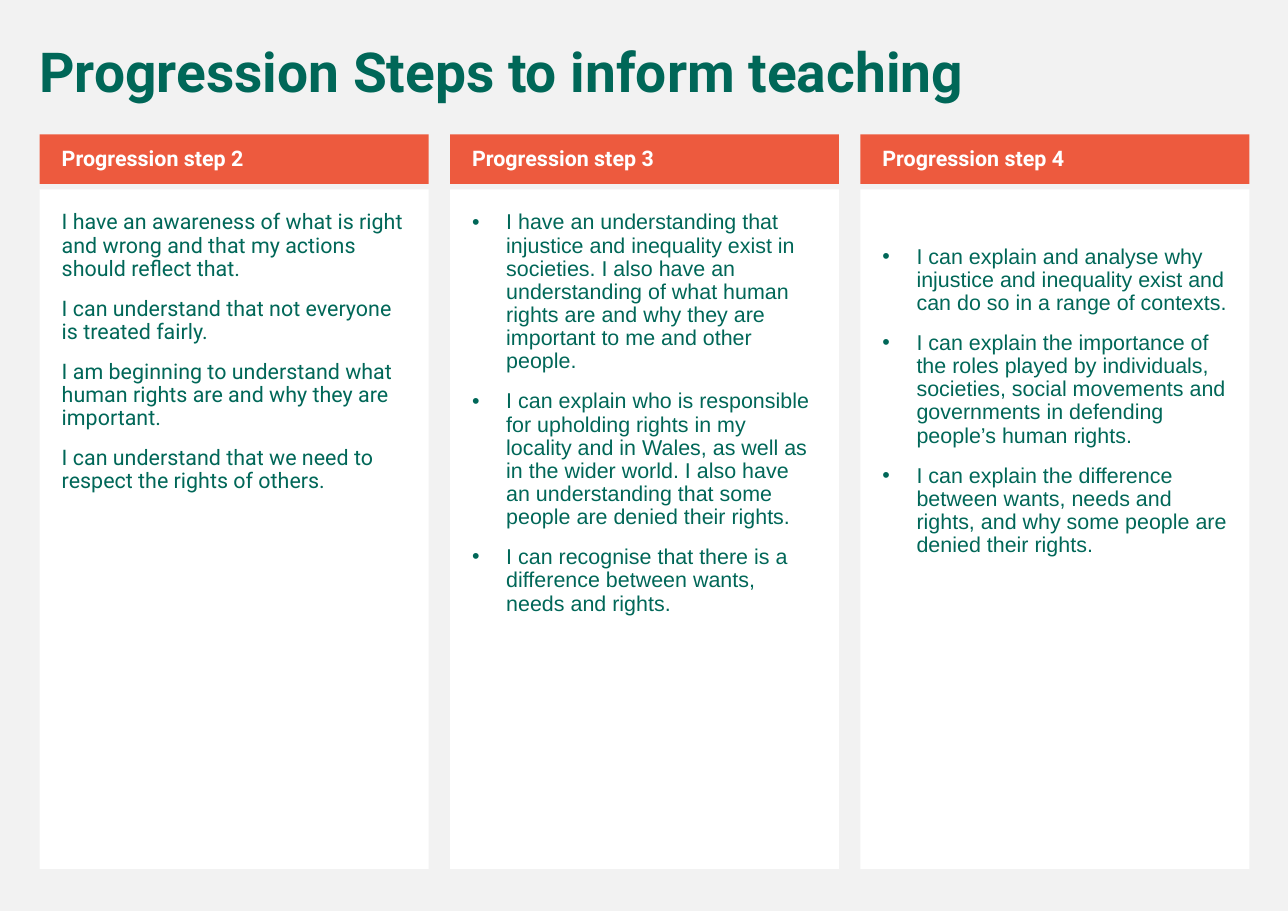
from dataclasses import dataclass

from lxml import etree
from pptx import Presentation
from pptx.dml.color import RGBColor
from pptx.enum.shapes import MSO_SHAPE
from pptx.enum.text import MSO_ANCHOR, PP_ALIGN
from pptx.oxml.ns import qn
from pptx.shapes.autoshape import Shape
from pptx.slide import Slide
from pptx.text.text import TextFrame
from pptx.util import Inches, Pt

RECTANGLE = MSO_SHAPE.RECTANGLE
TOP, MIDDLE = MSO_ANCHOR.TOP, MSO_ANCHOR.MIDDLE
LEFT = PP_ALIGN.LEFT

SLIDE_WIDTH, SLIDE_HEIGHT = 11.69, 8.27
COLUMN, ROW = SLIDE_WIDTH / 100, SLIDE_HEIGHT / 100
CARD_LEFT, CARD_WIDTH, CARD_PITCH = 3.08, 30.2, 31.86
HEADING_TOP, HEADING_HEIGHT = 14.75, 5.44
BODY_TOP, BODY_HEIGHT = 20.8, 74.6
PADDING = 0.2
BULLET_INDENT = 0.31

COLORS = {
    "background": "F2F2F2",
    "text": "006758",
    "heading": "ED5A3E",
    "white": "FFFFFF",
}


@dataclass(frozen=True)
class TextStyle:
    """Font settings of a block of text."""
    font: str
    size: int
    color: str
    bold: bool = False
    bulleted: bool = False


@dataclass(frozen=True)
class Area:
    """Position and size in grid columns and rows."""
    left: float
    top: float
    width: float
    height: float

    def lengths(self) -> tuple[int, int, int, int]:
        """Return left, top, width and height as slide lengths."""
        return (Inches(self.left * COLUMN), Inches(self.top * ROW),
                Inches(self.width * COLUMN), Inches(self.height * ROW))


@dataclass(frozen=True)
class ProgressionStep:
    """One column of the slide."""
    heading: str
    statements: tuple[str, ...]
    style: TextStyle
    top_padding: float = PADDING


TITLE = TextStyle("Roboto", 36, "text", bold=True)
HEADING = TextStyle("Roboto", 14, "white", bold=True)
PLAIN = TextStyle("Roboto", 14, "text")
BULLETED = TextStyle("Arial", 14, "text", bulleted=True)

STEPS = (
    ProgressionStep("Progression step 2", (
        "I have an awareness of what is right and wrong and that my actions should reflect that.",
        "I can understand that not everyone is treated fairly.",
        "I am beginning to understand what human rights are and why they are important.",
        "I can understand that we need to respect the rights of others.",
    ), PLAIN),
    ProgressionStep("Progression step 3", (
        "I have an understanding that injustice and inequality exist in societies. I also have "
        "an understanding of what human rights are and why they are important to me and other people.",
        "I can explain who is responsible for upholding rights in my locality and in Wales, as well "
        "as in the wider world. I also have an understanding that some people are denied their rights.",
        "I can recognise that there is a difference between wants, needs and rights.",
    ), BULLETED),
    ProgressionStep("Progression step 4", (
        "I can explain and analyse why injustice and inequality exist and can do so in a range of contexts.",
        "I can explain the importance of the roles played by individuals, societies, social movements "
        "and governments in defending people’s human rights.",
        "I can explain the difference between wants, needs and rights, and why some people are "
        "denied their rights.",
    ), BULLETED, top_padding=0.51),
)


def color(name: str) -> RGBColor:
    """Return a named colour."""
    return RGBColor.from_string(COLORS[name])


def write(frame: TextFrame, texts: tuple[str, ...], style: TextStyle) -> None:
    """Fill a text frame with one styled paragraph per text."""
    frame.word_wrap = True
    for index, text in enumerate(texts):
        paragraph = frame.add_paragraph() if index else frame.paragraphs[0]
        paragraph.alignment = LEFT
        paragraph.line_spacing = 0.9
        paragraph.space_before = Pt(11)
        run = paragraph.add_run()
        run.text = text
        run.font.name = style.font
        run.font.size = Pt(style.size)
        run.font.bold = style.bold
        run.font.color.rgb = color(style.color)
        if style.bulleted:
            properties = paragraph._p.get_or_add_pPr()
            properties.set("marL", str(Inches(BULLET_INDENT)))
            properties.set("indent", str(-Inches(BULLET_INDENT)))
            etree.SubElement(properties, qn("a:buFont")).set("typeface", "Arial")
            etree.SubElement(properties, qn("a:buChar")).set("char", "•")


def add_panel(slide: Slide, area: Area, fill: str) -> Shape:
    """Add a plain filled rectangle."""
    shape = slide.shapes.add_shape(RECTANGLE, *area.lengths())
    shape.shadow.inherit = False
    shape.fill.solid()
    shape.fill.fore_color.rgb = color(fill)
    shape.line.fill.background()
    shape.text_frame.margin_left = Inches(PADDING)
    return shape


def add_step(slide: Slide, step: ProgressionStep, index: int) -> None:
    """Add the body and heading of one progression step."""
    left = CARD_LEFT + index * CARD_PITCH
    body = add_panel(slide, Area(left, BODY_TOP, CARD_WIDTH, BODY_HEIGHT), "white").text_frame
    body.vertical_anchor = TOP
    body.margin_top = Inches(step.top_padding)
    body.margin_right = body.margin_bottom = Inches(PADDING)
    write(body, step.statements, step.style)

    heading = add_panel(slide, Area(left, HEADING_TOP, CARD_WIDTH, HEADING_HEIGHT), "heading").text_frame
    heading.vertical_anchor = MIDDLE
    write(heading, (step.heading,), HEADING)


def main() -> None:
    """Build and save the slide."""
    presentation = Presentation()
    presentation.slide_width = Inches(SLIDE_WIDTH)
    presentation.slide_height = Inches(SLIDE_HEIGHT)
    slide = presentation.slides.add_slide(presentation.slide_layouts[6])
    slide.background.fill.solid()
    slide.background.fill.fore_color.rgb = color("background")
    for index, step in enumerate(STEPS):
        add_step(slide, step, index)
    title = slide.shapes.add_textbox(*Area(2.22, 4.35, 94.8, 7.86).lengths())
    write(title.text_frame, ("Progression Steps to inform teaching",), TITLE)
    presentation.save("out.pptx")


if __name__ == "__main__":
    main()
